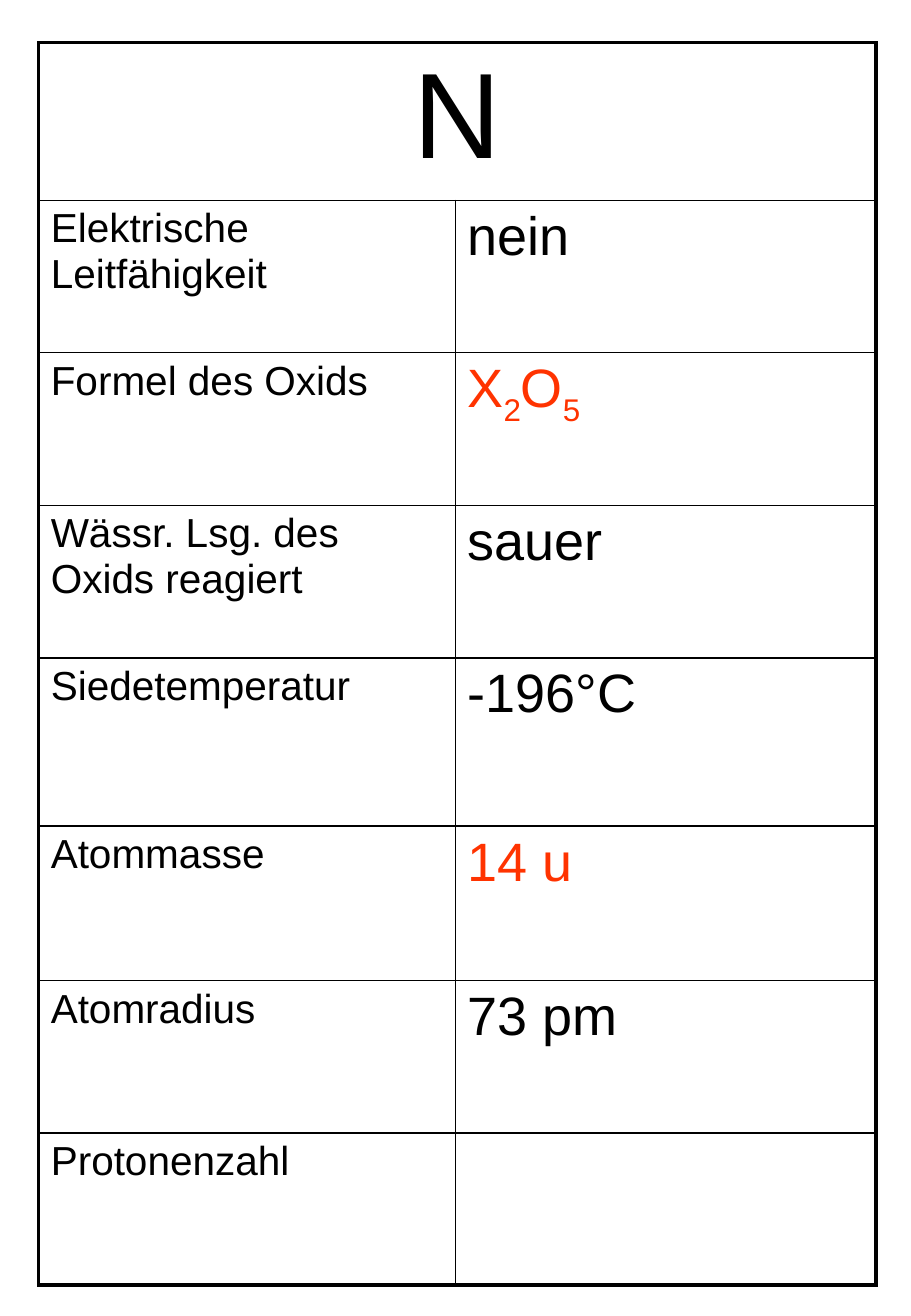
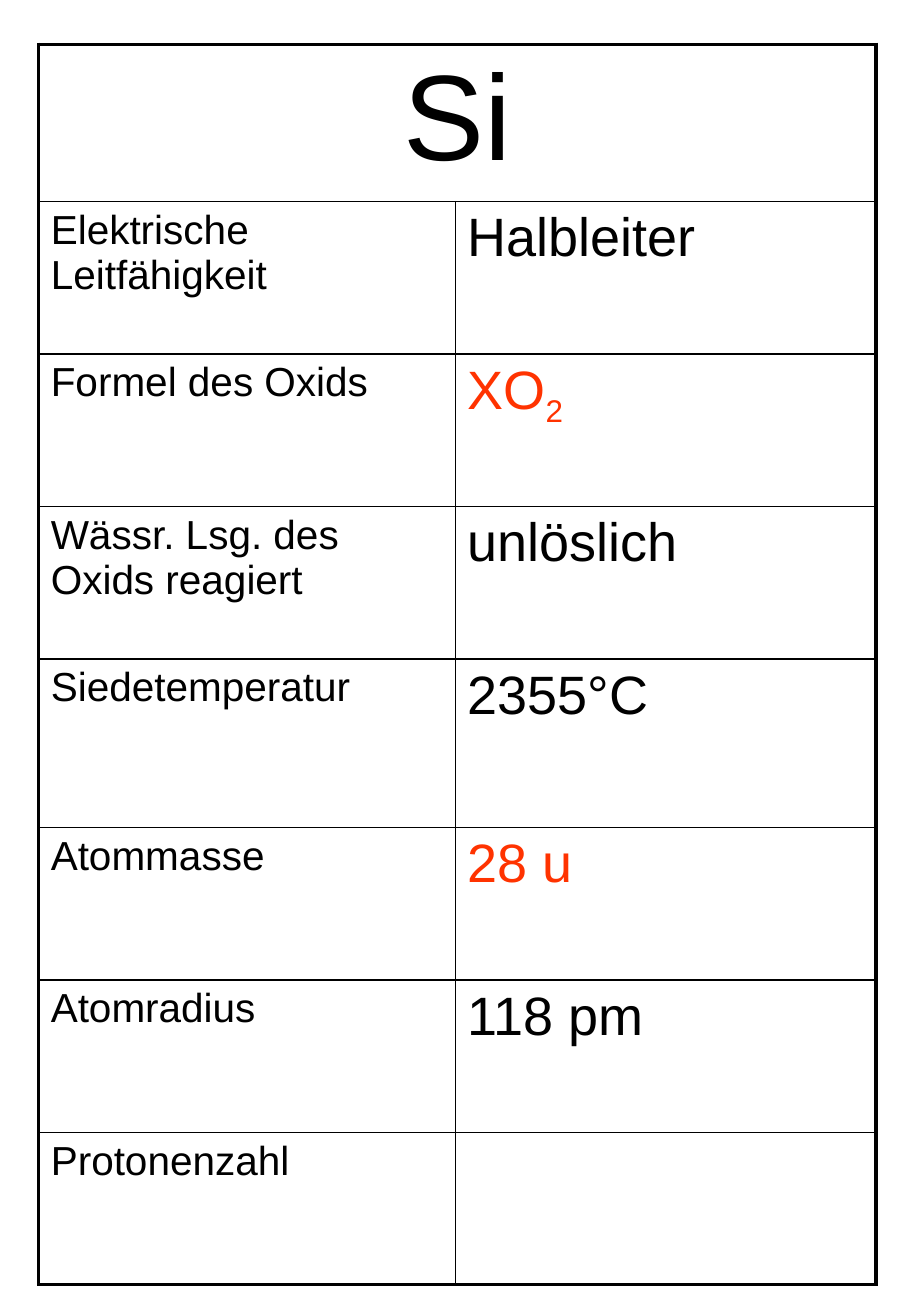
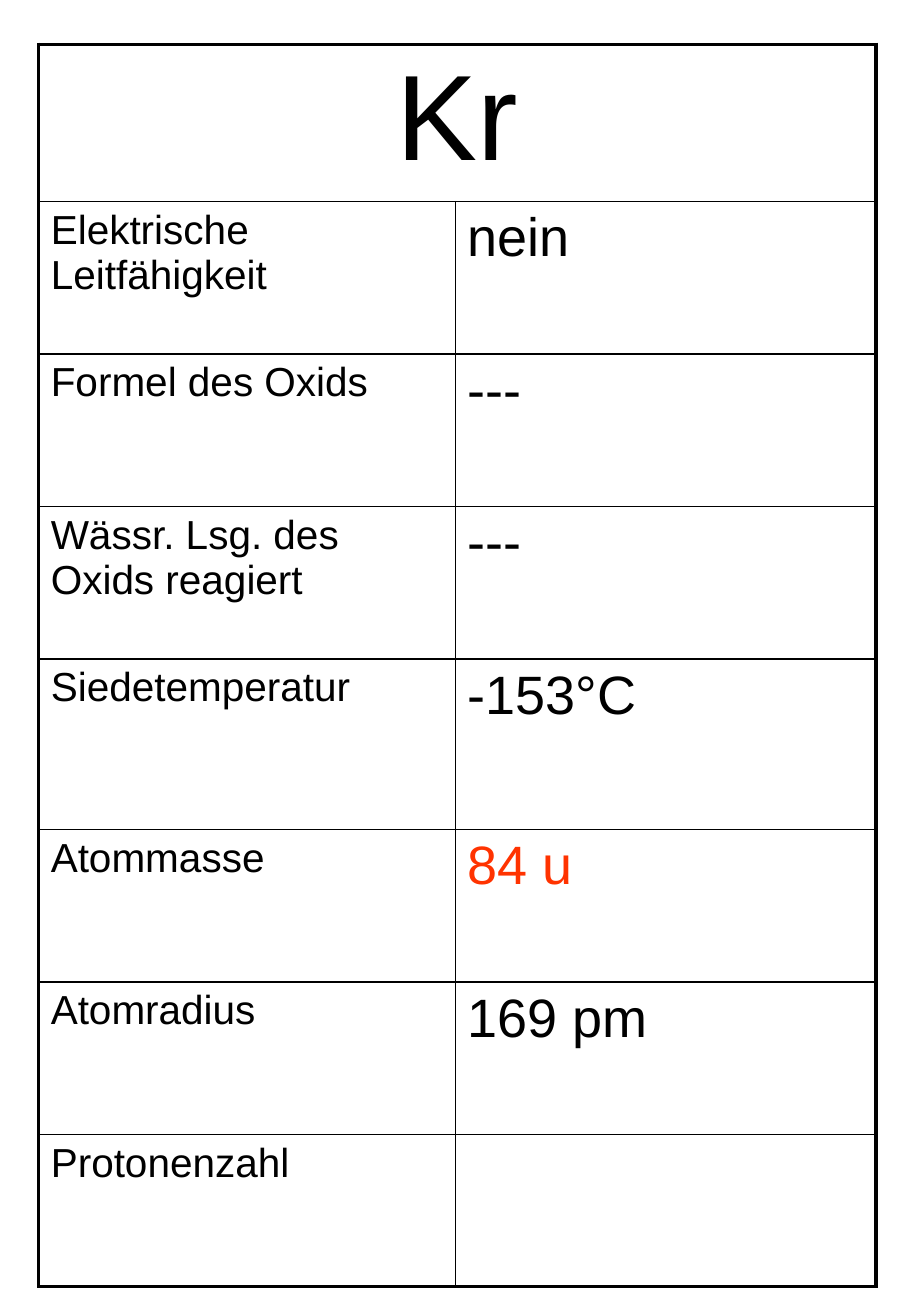
import pptx
import pptx.dml.color
import pptx.enum.text
import pptx.oxml.ns
import pptx.util
from lxml import etree

Pt = pptx.util.Pt
qn = pptx.oxml.ns.qn

BLACK = pptx.dml.color.RGBColor(0x00, 0x00, 0x00)
RED = pptx.dml.color.RGBColor(0xFF, 0x33, 0x00)

PROPERTIES = (
    "Elektrische Leitfähigkeit",
    "Formel des Oxids",
    "Wässr. Lsg. des Oxids reagiert",
    "Siedetemperatur",
    "Atommasse",
    "Atomradius",
    "Protonenzahl",
)

ELEMENTS = (
    {
        "symbol": "N",
        "top": 25.4,
        "heights": {4: 99.7, 5: 91.7},
        "values": ((BLACK, "nein"), (RED, "X", "2", "O", "5"), (BLACK, "sauer"),
                   (BLACK, "-196°C"), (RED, "14 u"), (BLACK, "73 pm")),
    },
    {
        "symbol": "Si",
        "top": 26.2,
        "heights": {4: 99.8},
        "values": ((BLACK, "Halbleiter"), (RED, "XO", "2"), (BLACK, "unlöslich"),
                   (BLACK, "2355°C"), (RED, "28 u"), (BLACK, "118 pm")),
    },
    {
        "symbol": "Kr",
        "top": 26.2,
        "heights": {4: 101},
        "values": ((BLACK, "nein"), (BLACK, "---"), (BLACK, "---"),
                   (BLACK, "-153°C"), (RED, "84 u"), (BLACK, "169 pm")),
    },
)


class CardDeck:
    FONT = "Arial"
    SYMBOL_SIZE, LABEL_SIZE, VALUE_SIZE = 72, 24, 32
    LEFT = 22.9
    COLUMN_WIDTHS = (247, 249.4)
    ROW_HEIGHT = 90.4
    SPECIAL_HEIGHTS = {0: 93.3, 7: 90}
    OUTER_LINE, INNER_LINE = 2.25, 1
    CELL_FORMAT = {
        "margin_left": Pt(7.2),
        "margin_right": Pt(7.2),
        "margin_top": Pt(3.6),
        "margin_bottom": Pt(3.6),
        "vertical_anchor": pptx.enum.text.MSO_ANCHOR.TOP,
    }
    TABLE_FORMAT = {"first_row": False, "horz_banding": False}

    def __init__(self):
        self.presentation = pptx.Presentation()
        self.presentation.slide_width = Pt(540)
        self.presentation.slide_height = Pt(780)
        self.slide = None

    def add_slide(self):
        self.slide = self.presentation.slides.add_slide(self.presentation.slide_layouts[6])

    def apply(self, target, values):
        for name, value in values.items():
            setattr(target, name, value)

    def add_table(self, top, special_heights):
        special = {**self.SPECIAL_HEIGHTS, **special_heights}
        row_count = len(PROPERTIES) + 1
        heights = [special.get(row, self.ROW_HEIGHT) for row in range(row_count)]
        table = self.slide.shapes.add_table(
            row_count, len(self.COLUMN_WIDTHS), Pt(self.LEFT), Pt(top),
            Pt(sum(self.COLUMN_WIDTHS)), Pt(sum(heights))).table
        self.apply(table, self.TABLE_FORMAT)
        for column, width in zip(table.columns, self.COLUMN_WIDTHS):
            column.width = Pt(width)
        for row, height in zip(table.rows, heights):
            row.height = Pt(height)
        table.cell(0, 0).merge(table.cell(0, 1))
        for row in range(row_count):
            for column in range(2):
                cell = table.cell(row, column)
                self.apply(cell, self.CELL_FORMAT)
                self.add_borders(cell, {
                    "lnL": column == 0,
                    "lnR": column == 1 or row == 0,
                    "lnT": row == 0,
                    "lnB": row == row_count - 1,
                })
                cell.fill.background()
        return table

    def add_borders(self, cell, sides):
        properties = cell._tc.get_or_add_tcPr()
        for side, outer in sides.items():
            width = self.OUTER_LINE if outer else self.INNER_LINE
            line = etree.SubElement(properties, qn(f"a:{side}"), w=str(int(Pt(width))))
            fill = etree.SubElement(line, qn("a:solidFill"))
            etree.SubElement(fill, qn("a:srgbClr"), val=str(BLACK))

    def add_text(self, cell, pieces, size, color=BLACK, alignment=pptx.enum.text.PP_ALIGN.LEFT):
        paragraph = cell.text_frame.paragraphs[0]
        paragraph.alignment = alignment
        spacing = etree.SubElement(paragraph._p.get_or_add_pPr(), qn("a:spcBef"))
        etree.SubElement(spacing, qn("a:spcPct"), val="20000")
        for index, text in enumerate(pieces):
            run = paragraph.add_run()
            run.text = text
            self.apply(run.font, {"name": self.FONT, "size": Pt(size)})
            run.font.color.rgb = color
            is_subscript = index % 2 == 1
            if is_subscript:
                run._r.get_or_add_rPr().set("baseline", "-25000")

    def add_card(self, symbol, top, heights, values):
        self.add_slide()
        table = self.add_table(top, heights)
        self.add_text(table.cell(0, 0), [symbol], self.SYMBOL_SIZE,
                      alignment=pptx.enum.text.PP_ALIGN.CENTER)
        for row, label in enumerate(PROPERTIES, 1):
            self.add_text(table.cell(row, 0), [label], self.LABEL_SIZE)
        for row, (color, *pieces) in enumerate(values, 1):
            self.add_text(table.cell(row, 1), pieces, self.VALUE_SIZE, color)


def main():
    deck = CardDeck()
    for element in ELEMENTS:
        deck.add_card(**element)
    deck.presentation.save("out.pptx")


if __name__ == "__main__":
    main()
